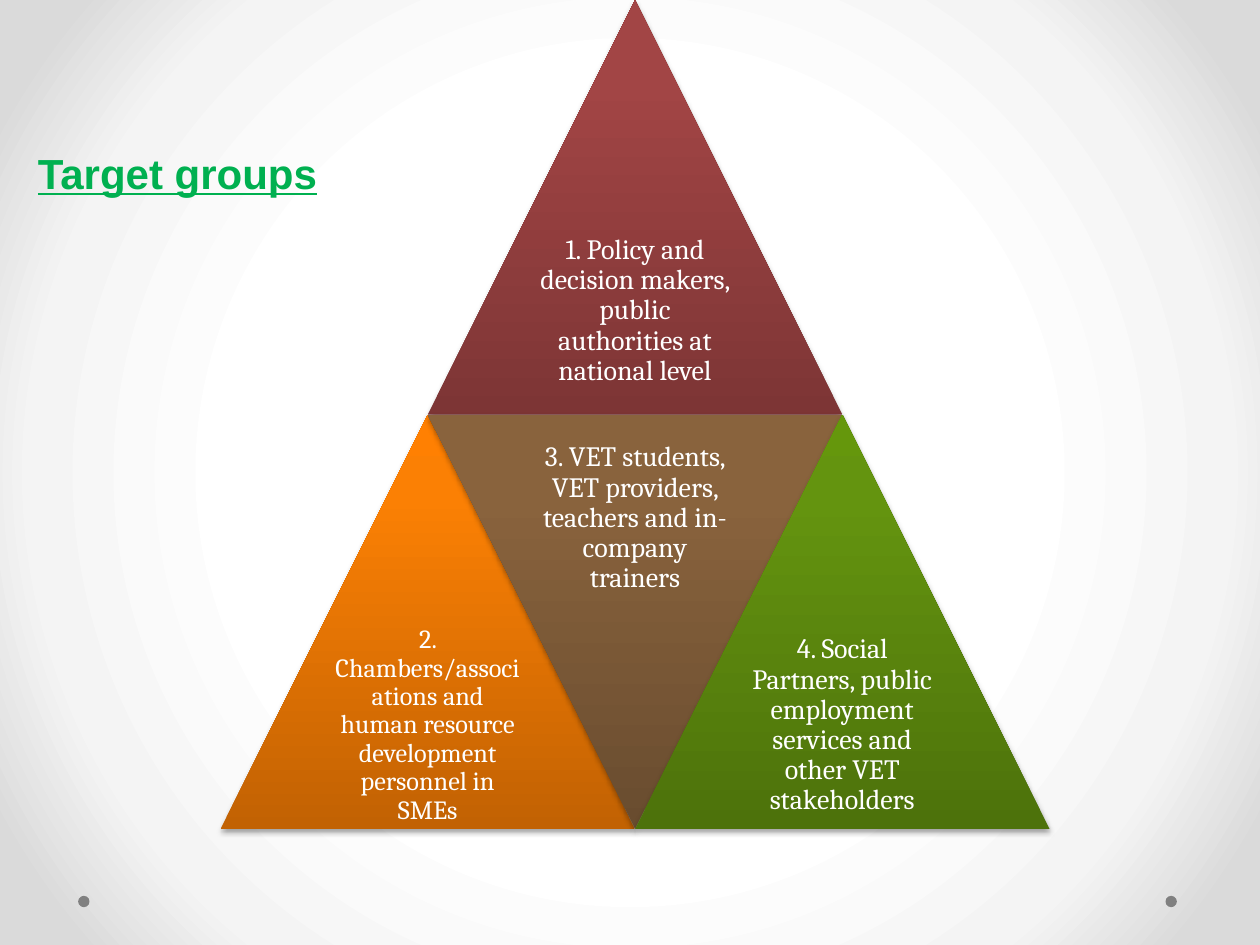
from pptx import Presentation
from pptx.dml.color import RGBColor
from pptx.enum.shapes import MSO_SHAPE as Shape
from pptx.enum.text import MSO_ANCHOR as Anchor, MSO_AUTO_SIZE as AutoSize, PP_ALIGN as Align
from pptx.oxml import parse_xml
from pptx.oxml.ns import nsdecls
from pptx.util import Inches, Pt

CELL = 6.58 / 4
LEFT = 1.75
GROUPS = [
    (1, 0, False, 16, ("7D3535", "A24545", "A44343"),
     "1. Policy and decision makers, public authorities at national level"),
    (0, 2, False, 15, ("C26203", "FB8004", "FF8002"),
     "2. Chambers/associations and human resource development personnel in SMEs"),
    (1, 2, True, 16, ("694C2F", "89633D", "8B633C"),
     "3. VET students, VET providers, teachers and in-company trainers"),
    (2, 2, False, 16, ("4D720B", "64940F", "65970C"),
     "4. Social Partners, public employment services and other VET stakeholders"),
]


def color(value):
    """Turn a hex string into a colour."""
    return RGBColor.from_string(value)


def grid(column, row, span):
    """Give the left, top, width and height of a square on the pyramid grid."""
    return [Inches(n) for n in (LEFT + column * CELL, row * CELL, span * CELL, span * CELL)]


def gradient(stops, direction):
    """Write a gradient fill from (percent, hex) stops."""
    marks = "".join(f'<a:gs pos="{at * 1000}"><a:srgbClr val="{value}"/></a:gs>'
                    for at, value in stops)
    return (f'<a:gradFill {nsdecls("a")} rotWithShape="0"><a:gsLst>{marks}</a:gsLst>'
            f'{direction}</a:gradFill>')


def paint_background(page):
    """Fill the page with a round gradient from white to grey."""
    fill = gradient([(50, "FFFFFF"), (76, "F4F4F4"), (92, "DADADA")],
                    '<a:path path="circle"><a:fillToRect l="50000" t="50000" '
                    'r="50000" b="50000"/></a:path>')
    page.element.cSld.insert(0, parse_xml(
        f'<p:bg {nsdecls("p", "a")}><p:bgPr>{fill}<a:effectLst/></p:bgPr></p:bg>'))


def add_dot(page, left):
    """Add a small grey dot near the foot of the page."""
    dot = page.shapes.add_shape(Shape.OVAL, Inches(left), Inches(7.11), Inches(0.09), Inches(0.09))
    dot.shadow.inherit = False
    dot.fill.solid()
    dot.fill.fore_color.rgb = color("808080")
    dot.line.fill.background()


def add_triangle(page, column, row, inverted, shades):
    """Add a shaded triangle two cells wide."""
    triangle = page.shapes.add_shape(Shape.ISOSCELES_TRIANGLE, *grid(column, row, 2))
    triangle.rotation = 180 if inverted else 0
    triangle.line.fill.background()
    properties = triangle.element.spPr
    fill = gradient(zip((0, 80, 100), shades), '<a:lin ang="16200000" scaled="0"/>')
    properties.insert(2, parse_xml(fill))
    properties.append(parse_xml(
        f'<a:effectLst {nsdecls("a")}><a:outerShdw blurRad="{Pt(3.1)}" dist="{Pt(1.8)}" '
        'dir="5400000" rotWithShape="0"><a:srgbClr val="000000"><a:alpha val="35000"/>'
        '</a:srgbClr></a:outerShdw></a:effectLst>'))


def write(para, text, size, font, value):
    """Add one formatted run to a paragraph."""
    span = para.add_run()
    span.text = text
    span.font.size = Pt(size)
    span.font.name = font
    span.font.color.rgb = color(value)
    return span


def add_label(page, column, row, size, text):
    """Add a centred white label one cell wide."""
    frame = page.shapes.add_textbox(*grid(column, row, 1)).text_frame
    frame.word_wrap = True
    frame.vertical_anchor = Anchor.MIDDLE
    inset = Inches(0.07 if size == 16 else 0.06)
    frame.margin_left = frame.margin_right = frame.margin_top = frame.margin_bottom = inset
    para = frame.paragraphs[0]
    para.alignment = Align.CENTER
    para.line_spacing = 0.9
    para.space_after = Pt(0.35 * size)
    write(para, text, size, "Cambria", "FFFFFF")


def set_title(page, text):
    """Place and format the page title."""
    title = page.shapes.title
    title.left, title.top, title.width, title.height = map(Inches, (0.2, 0.92, 7.8, 0.63))
    frame = title.text_frame
    frame.word_wrap = True
    frame.auto_size = AutoSize.NONE
    frame.vertical_anchor = Anchor.TOP
    para = frame.paragraphs[0]
    para.alignment = Align.LEFT
    para.line_spacing = 1.5
    span = write(para, text, 24, "Arial", "00B050")
    span.font.bold = span.font.underline = True


def main():
    """Build the target groups slide."""
    deck = Presentation()
    deck.slide_width, deck.slide_height = Inches(10), Inches(7.5)
    page = deck.slides.add_slide(deck.slide_layouts[5])
    paint_background(page)
    for left in (9.25, 0.62):
        add_dot(page, left)
    for column, row, inverted, size, shades, text in GROUPS:
        add_triangle(page, column, row, inverted, shades)
        add_label(page, column + 0.5, row if inverted else row + 1, size, text)
    set_title(page, "Target groups")
    deck.save("out.pptx")


if __name__ == "__main__":
    main()
